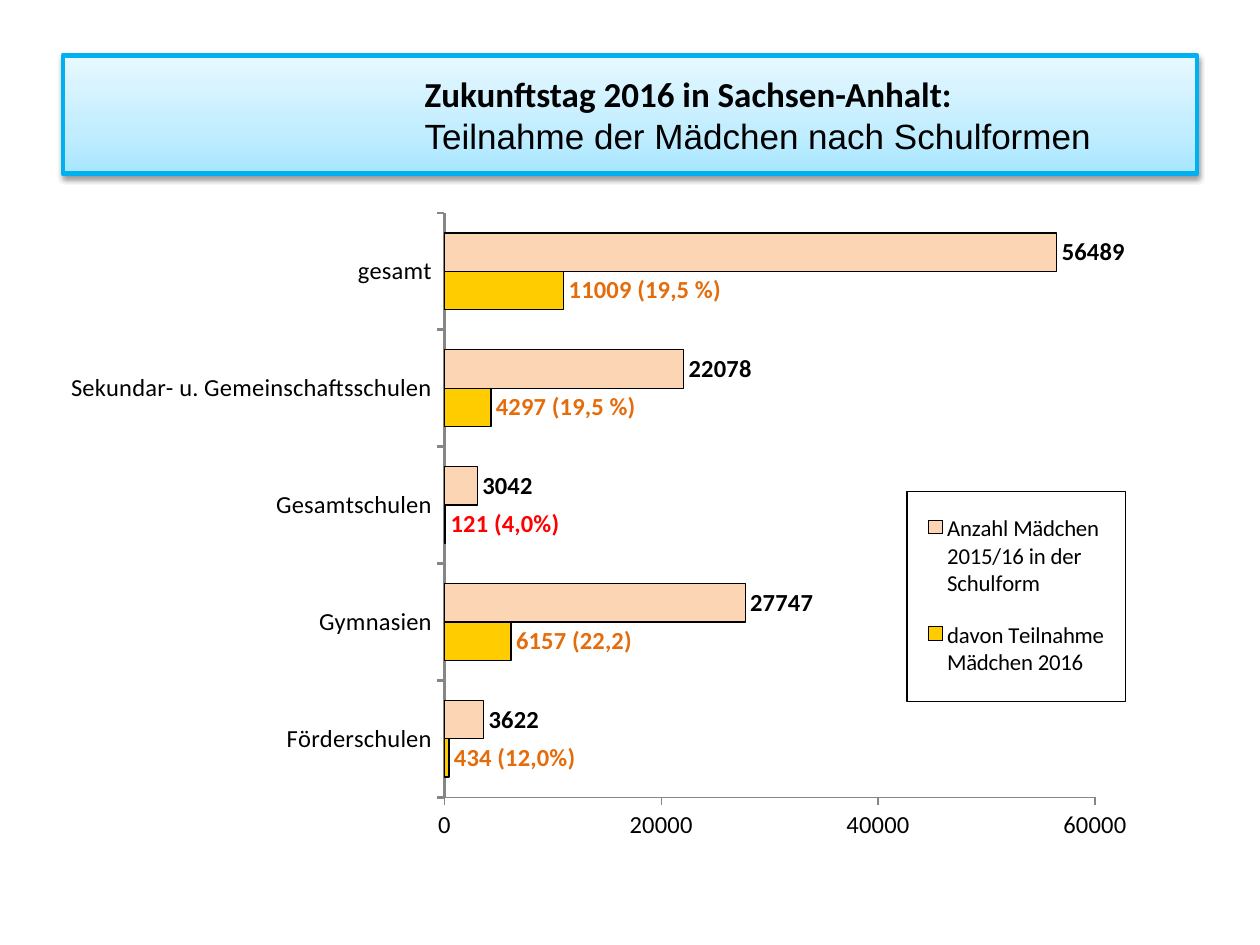
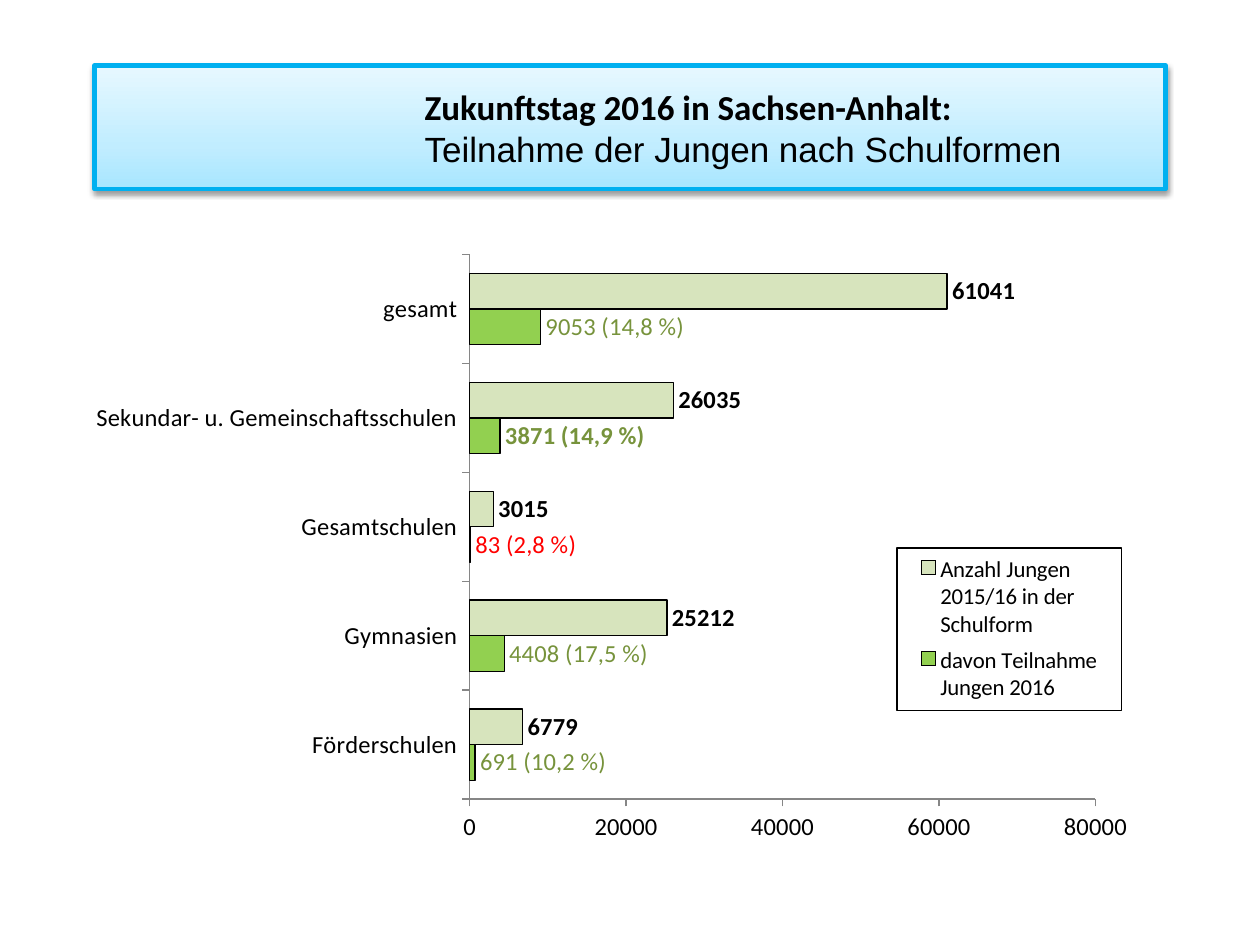
from copy import deepcopy
from dataclasses import dataclass

from lxml.etree import SubElement
from pptx import Presentation
from pptx.chart.data import CategoryChartData
from pptx.dml.color import RGBColor
from pptx.enum.chart import XL_CHART_TYPE as ChartType
from pptx.enum.chart import XL_LABEL_POSITION as LabelPosition
from pptx.enum.chart import XL_LEGEND_POSITION as LegendPosition
from pptx.enum.chart import XL_TICK_MARK as TickMark
from pptx.enum.text import MSO_ANCHOR as Anchor
from pptx.enum.text import MSO_AUTO_SIZE as AutoSize
from pptx.enum.text import PP_ALIGN as Align
from pptx.oxml.ns import qn
from pptx.util import Inches, Pt


@dataclass(frozen=True)
class Theme:
    heading_font: str = "Calibri"
    subject_font: str = "Arial"
    title_size: int = 20
    label_size: int = 14
    legend_size: int = 13
    text: str = "000000"
    warning: str = "FF0000"
    axis: str = "868686"
    band_line: str = "00B0F0"
    band_stops: tuple = ((0, "A7E6FF"), (0.35, "C1EDFF"), (1, "E7F8FF"))
    band_line_width: float = 2.75
    thin_line: float = 0.75
    title_text_left: float = 3.37


THEME = Theme()
HEADING = "Zukunftstag 2016 in Sachsen-Anhalt:"
SCHOOL_TYPES = ["Förderschulen", "Gymnasien", "Gesamtschulen",
                "Sekundar- u. Gemeinschaftsschulen", "gesamt"]
WARNING_INDEX = SCHOOL_TYPES.index("Gesamtschulen")

SLIDES = [
    {
        "subject": "Teilnahme der Mädchen nach Schulformen",
        "band": (0.5, 0.44, 9, 0.94),
        "chart": (0.51, 1.62, 8.98, 5.35),
        "plot": (0.336, 0.013, 0.575, 0.867),
        "legend": (7.2, 3.9, 1.73, 1.67),
        "axis_max": 60000,
        "axis_width": 1.5,
        "gap": 105,
        "joined": {
            "name": "davon Teilnahme Mädchen 2016",
            "values": [434, 6157, 121, 4297, 11009],
            "labels": ["434 (12,0%)", "6157 (22,2)", "121 (4,0%)",
                       "4297 (19,5 %)", "11009 (19,5 %)"],
            "bold": {0, 1, 2, 3, 4},
            "fill": "FFCC00",
            "text": "E46C0A",
        },
        "total": {
            "name": "Anzahl Mädchen 2015/16 in der Schulform",
            "values": [3622, 27747, 3042, 22078, 56489],
            "fill": "FCD5B5",
        },
    },
    {
        "subject": "Teilnahme der Jungen nach Schulformen",
        "band": (0.75, 0.52, 8.5, 0.98),
        "chart": (0.35, 1.7, 9.13, 5.43),
        "plot": (0.37, 0.059, 0.544, 0.796),
        "legend": (7.12, 4.35, 1.78, 1.29),
        "axis_max": 80000,
        "axis_width": 0.75,
        "gap": 106,
        "joined": {
            "name": "davon Teilnahme Jungen 2016",
            "values": [691, 4408, 83, 3871, 9053],
            "labels": ["691 (10,2 %)", "4408 (17,5 %)", "83 (2,8 %)",
                       "3871 (14,9 %)", "9053 (14,8 %)"],
            "bold": {3},
            "fill": "92D050",
            "text": "77933C",
        },
        "total": {
            "name": "Anzahl Jungen 2015/16 in der Schulform",
            "values": [6779, 26035, 3015, 25212, 61041],
            "fill": "D7E4BD",
        },
    },
]
SLIDES[1]["total"]["values"] = [6779, 25212, 3015, 26035, 61041]


def style_font(font, size, color=THEME.text, bold=False, name=THEME.heading_font):
    font.name = name
    font.size = Pt(size)
    font.bold = bold
    font.color.rgb = RGBColor.from_string(color)


def style_line(line, color=THEME.text, width=THEME.thin_line):
    line.color.rgb = RGBColor.from_string(color)
    line.width = Pt(width)


def fill_band(shape):
    shape.fill.gradient()
    shape.fill.gradient_angle = 90
    stop_list = shape._element.spPr.find(".//" + qn("a:gsLst"))
    stop_list.insert(1, deepcopy(stop_list[0]))
    for stop, (position, color) in zip(shape.fill.gradient_stops, THEME.band_stops):
        stop.position = position
        stop.color.rgb = RGBColor.from_string(color)


def add_shadow(shape):
    shape.shadow.inherit = False
    effects = shape._element.spPr.find(qn("a:effectLst"))
    shadow = SubElement(effects, qn("a:outerShdw"), blurRad="40000",
                        dist="20000", dir="5400000", rotWithShape="0")
    color = SubElement(shadow, qn("a:srgbClr"), val=THEME.text)
    SubElement(color, qn("a:alpha"), val="38000")


def format_title(shape, subject, box):
    shape.left, shape.top, shape.width, shape.height = map(Inches, box)
    fill_band(shape)
    style_line(shape.line, THEME.band_line, THEME.band_line_width)
    add_shadow(shape)
    frame = shape.text_frame
    frame.text = f"{HEADING}\n{subject}"
    frame.auto_size = AutoSize.NONE
    frame.word_wrap = True
    frame.vertical_anchor = Anchor.MIDDLE
    frame.margin_left = Inches(THEME.title_text_left - box[0])
    styles = ((THEME.heading_font, True), (THEME.subject_font, False))
    for paragraph, (name, bold) in zip(frame.paragraphs, styles):
        paragraph.alignment = Align.LEFT
        paragraph.space_before = Pt(0)
        style_font(paragraph.runs[0].font, THEME.title_size, bold=bold, name=name)


def set_layout(parent, index, fractions, inner=False):
    for old_layout in parent.findall(qn("c:layout")):
        parent.remove(old_layout)
    layout = SubElement(parent, qn("c:layout"))
    parent.insert(index, layout)
    manual = SubElement(layout, qn("c:manualLayout"))
    if inner:
        SubElement(manual, qn("c:layoutTarget"), val="inner")
    for mode in ("xMode", "yMode"):
        SubElement(manual, qn(f"c:{mode}"), val="edge")
    for key, value in zip("xywh", fractions):
        SubElement(manual, qn(f"c:{key}"), val=f"{value:.4f}")


def format_axis(axis, width=THEME.thin_line):
    axis.has_major_gridlines = False
    axis.major_tick_mark = TickMark.OUTSIDE
    axis.minor_tick_mark = TickMark.NONE
    style_font(axis.tick_labels.font, THEME.label_size)
    style_line(axis.format.line, THEME.axis, width)


def format_series(series, content):
    series.invert_if_negative = False
    series.format.fill.solid()
    series.format.fill.fore_color.rgb = RGBColor.from_string(content["fill"])
    style_line(series.format.line)
    labels = series.data_labels
    labels.show_value = True
    labels.position = LabelPosition.OUTSIDE_END
    style_font(labels.font, THEME.label_size, content.get("text", THEME.text), True)
    for index, text in enumerate(content.get("labels", [])):
        label = series.points[index].data_label
        label.text_frame.text = text
        label.position = LabelPosition.OUTSIDE_END
        color = THEME.warning if index == WARNING_INDEX else content["text"]
        style_font(label.text_frame.paragraphs[0].runs[0].font,
                   THEME.label_size, color, index in content["bold"])


def add_legend(chart, box, chart_box):
    chart.has_legend = True
    legend = chart.legend
    legend.position = LegendPosition.RIGHT
    legend.include_in_layout = False
    style_font(legend.font, THEME.legend_size)
    left, top, width, height = chart_box
    fractions = ((box[0] - left) / width, (box[1] - top) / height,
                 box[2] / width, box[3] / height)
    element = legend._element
    set_layout(element, 1, fractions)
    properties = SubElement(element, qn("c:spPr"))
    element.find(qn("c:overlay")).addnext(properties)
    border = SubElement(properties, qn("a:ln"), w=str(Pt(THEME.thin_line)))
    fill = SubElement(border, qn("a:solidFill"))
    SubElement(fill, qn("a:srgbClr"), val=THEME.text)


def add_school_chart(slide, content):
    groups = (content["joined"], content["total"])
    data = CategoryChartData()
    data.categories = SCHOOL_TYPES
    for group in groups:
        data.add_series(group["name"], group["values"])
    chart = slide.shapes.add_chart(
        ChartType.BAR_CLUSTERED, *map(Inches, content["chart"]), data).chart
    chart.has_title = False
    style_font(chart.font, THEME.label_size)
    plot = chart.plots[0]
    plot.gap_width = content["gap"]
    plot.overlap = 0
    plot.vary_by_categories = False
    format_axis(chart.category_axis, content["axis_width"])
    format_axis(chart.value_axis)
    chart.value_axis.minimum_scale = 0
    chart.value_axis.maximum_scale = content["axis_max"]
    chart.value_axis.major_unit = 20000
    for series, group in zip(plot.series, groups):
        format_series(series, group)
    set_layout(chart._chartSpace.chart.plotArea, 0, content["plot"], inner=True)
    add_legend(chart, content["legend"], content["chart"])


def main():
    presentation = Presentation()
    presentation.slide_width, presentation.slide_height = Inches(10), Inches(7.5)
    for content in SLIDES:
        slide = presentation.slides.add_slide(presentation.slide_layouts[5])
        format_title(slide.shapes.title, content["subject"], content["band"])
        add_school_chart(slide, content)
    presentation.save("out.pptx")


if __name__ == "__main__":
    main()
